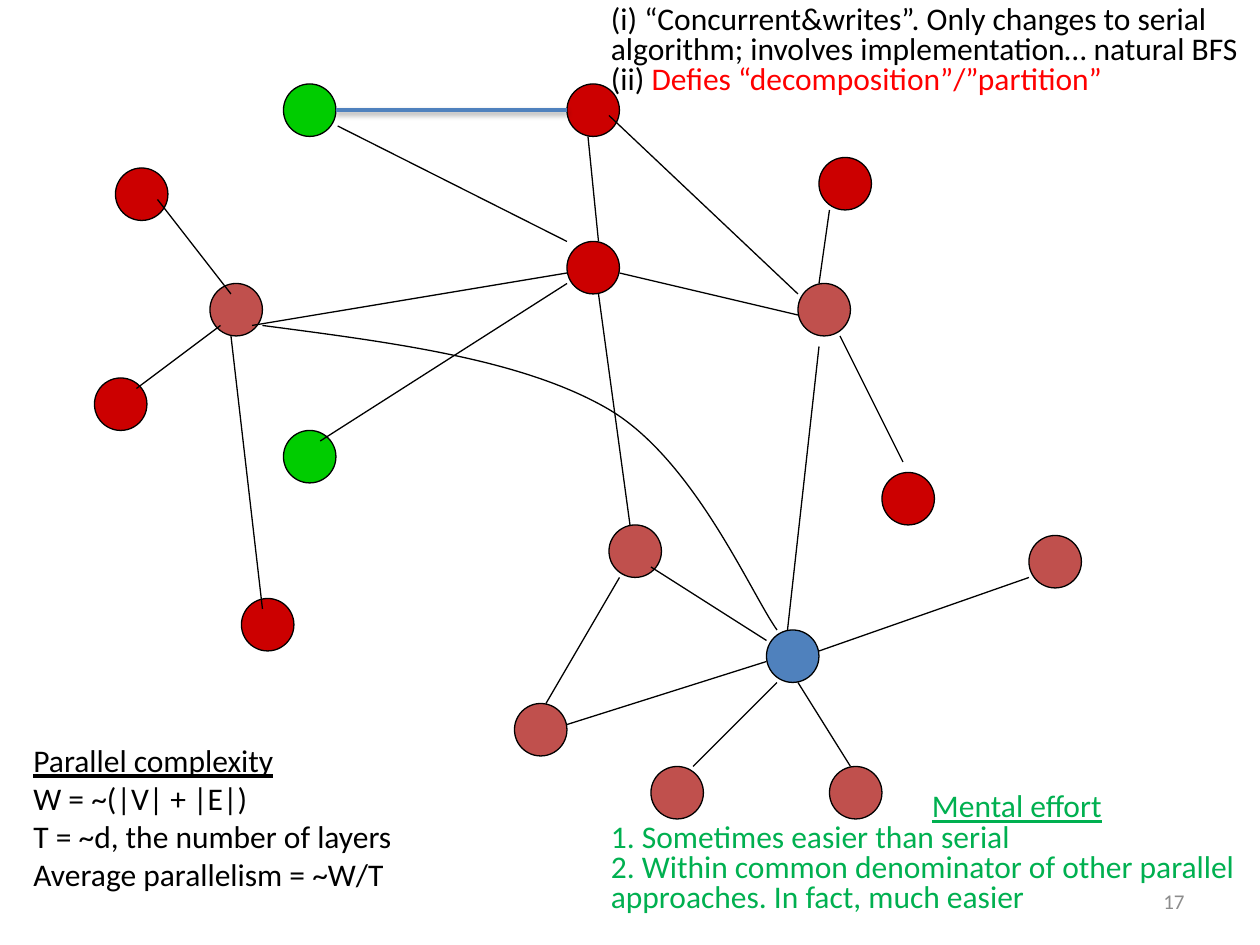
from lxml import etree
from pptx import Presentation
from pptx.dml.color import RGBColor
from pptx.enum import shapes, text
from pptx.oxml.ns import qn
from pptx.util import Pt

COLORS = {
    "red": "CC0000", "brick": "C0504D", "green": "00CC00", "blue": "4F81BD",
    "black": "000000", "alert": "FF0000", "effort": "00B050", "gray": "8C8C8C",
}
FONT = "Calibri"
NODE_SIZE = 30

NODES = [
    ("red", 66, 96), ("brick", 120, 162), ("green", 162, 48),
    ("red", 468, 90), ("red", 138, 342), ("red", 324, 138),
    ("red", 324, 48), ("brick", 588, 306), ("brick", 294, 402),
    ("brick", 348, 300), ("green", 162, 246), ("red", 54, 216),
    ("brick", 456, 162), ("blue", 438, 360), ("red", 504, 270),
    ("brick", 372, 438), ("brick", 474, 438),
]
EDGES = [
    (468, 198, 450, 360), (456, 168, 348, 66), (468, 162, 474, 120),
    (354, 156, 456, 180), (480, 192, 516, 264), (468, 372, 588, 330),
    (456, 390, 486, 438), (444, 390, 396, 438), (324, 414, 438, 378),
    (372, 324, 438, 366), (132, 192, 150, 348), (144, 186, 324, 156),
    (90, 114, 132, 168), (126, 186, 78, 222), (324, 162, 183, 252),
    (193, 72, 324, 138), (336, 78, 342, 138), (342, 168, 360, 300),
    (354, 330, 312, 402),
]
CURVED_EDGE = [
    (150, 186), (224.6, 195.8), (298.8, 205.2), (348, 234),
    (396.7, 262.8), (429.1, 339.1), (444, 360),
]
ACTIVE_EDGE = (324, 63, 192, 63)

COMPLEXITY = [
    [("Parallel complexity", {"underline": True})],
    [("W = ~(|V| + |E|)", {})],
    [("T = ~d, the number of layers", {})],
    [("Average parallelism = ~W/T", {})],
]
CHANGES = [
    [("(i) “Concurrent&writes”. Only changes to serial algorithm; "
      "involves implementation… natural BFS", {})],
    [("(ii) ", {}), ("Defies “decomposition”/”partition”", {"color": "alert"})],
]
EFFORT = [
    [("Mental effort", {"underline": True})],
    [("1. Sometimes easier than serial", {})],
    [("2. Within common denominator of other parallel approaches. "
      "In fact, much easier", {})],
]


def rgb(name):
    return RGBColor.from_string(COLORS[name])


def add_text(s, paragraphs, box, size=18, color="black", spacing=None, wrap=True,
             align=None, anchor=text.MSO_ANCHOR.TOP, first_indent=0, grow=True):
    tf = s.shapes.add_textbox(*map(Pt, box)).text_frame
    tf.word_wrap = wrap
    tf.vertical_anchor = anchor
    if grow:
        tf.auto_size = text.MSO_AUTO_SIZE.SHAPE_TO_FIT_TEXT
    for i, runs in enumerate(paragraphs):
        p = tf.add_paragraph() if i else tf.paragraphs[0]
        p.alignment = align
        p.line_spacing = spacing
        if first_indent and i == 0:
            p._p.get_or_add_pPr().set("marL", str(Pt(first_indent)))
        for content, style in runs:
            r = p.add_run()
            r.text = content
            r.font.name = FONT
            r.font.size = Pt(size)
            r.font.underline = style.get("underline", False)
            r.font.color.rgb = rgb(style.get("color", color))


def add_node(s, color, x, y):
    sp = s.shapes.add_shape(shapes.MSO_SHAPE.OVAL, Pt(x), Pt(y), Pt(NODE_SIZE), Pt(NODE_SIZE))
    sp.shadow.inherit = False
    sp.fill.solid()
    sp.fill.fore_color.rgb = rgb(color)
    sp.line.color.rgb = rgb("black")
    sp.line.width = Pt(0.75)


def add_edge(s, ends, color="black", width=0.75):
    cx = s.shapes.add_connector(shapes.MSO_CONNECTOR.STRAIGHT, *map(Pt, ends))
    cx.line.color.rgb = rgb(color)
    cx.line.width = Pt(width)
    return etree.SubElement(cx._element.spPr, qn("a:effectLst"))


def add_shadow(effects):
    shadow = etree.SubElement(effects, qn("a:outerShdw"), blurRad=str(Pt(3.1)),
                              dist=str(Pt(1.6)), dir="5400000", rotWithShape="0")
    tint = etree.SubElement(shadow, qn("a:srgbClr"), val=COLORS["black"])
    etree.SubElement(tint, qn("a:alpha"), val="38000")


def add_curve(s, points):
    start, *rest = [(Pt(x), Pt(y)) for x, y in points]
    builder = s.shapes.build_freeform(*start)
    builder.add_line_segments(rest, close=False)
    sp = builder.convert_to_shape()
    sp.shadow.inherit = False
    sp.fill.background()
    sp.line.color.rgb = rgb("black")
    sp.line.width = Pt(0.75)
    segments = list(sp._element.iter(qn("a:lnTo")))
    outline = segments[0].getparent()
    for i in range(0, len(segments), 3):
        bezier = etree.SubElement(outline, qn("a:cubicBezTo"))
        for segment in segments[i:i + 3]:
            bezier.append(segment[0])
            outline.remove(segment)


def main():
    prs = Presentation()
    prs.slide_width, prs.slide_height = Pt(720), Pt(540)
    s = prs.slides.add_slide(prs.slide_layouts[6])
    for node in NODES:
        add_node(s, *node)
    for edge in EDGES:
        add_edge(s, edge)
    add_curve(s, CURVED_EDGE)
    add_text(s, COMPLEXITY, (12, 420, 267, 104.4), wrap=False)
    add_text(s, CHANGES, (342, 0, 378, 60), spacing=0.8)
    add_text(s, EFFORT, (342, 450, 390, 77), color="effort", spacing=0.8, first_indent=183.5)
    add_text(s, [[("17", {})]], (516, 500.5, 168, 28.75), size=12, color="gray",
             align=text.PP_ALIGN.RIGHT, anchor=text.MSO_ANCHOR.MIDDLE, grow=False)
    add_shadow(add_edge(s, ACTIVE_EDGE, "blue", 2))
    prs.save("out.pptx")


if __name__ == "__main__":
    main()
